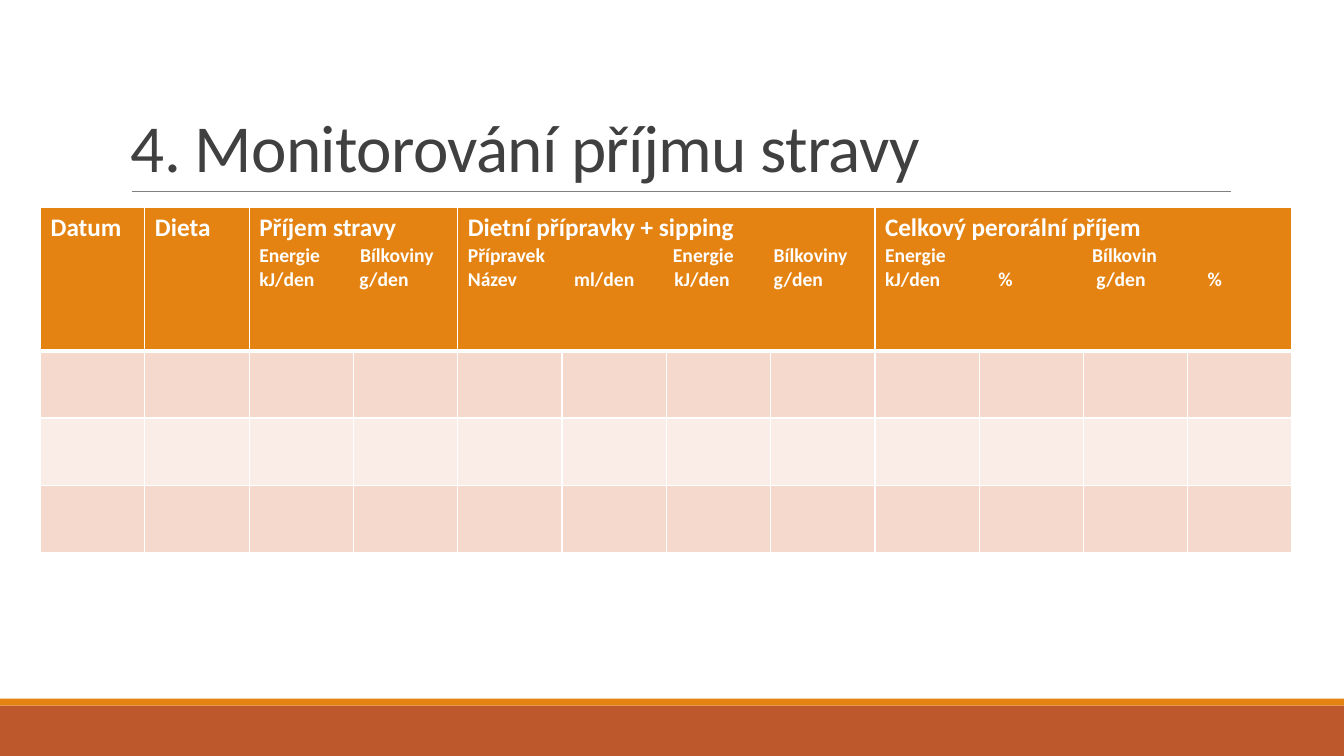
from pptx import Presentation
from pptx.dml.color import RGBColor
from pptx.enum.shapes import MSO_CONNECTOR, MSO_SHAPE
from pptx.enum.text import MSO_ANCHOR
from pptx.oxml.ns import qn
from pptx.util import Pt
from lxml.etree import SubElement

ORANGE = RGBColor(0xE4, 0x83, 0x12)
RUST = RGBColor(0xBD, 0x58, 0x2C)
GREY = RGBColor(0x80, 0x80, 0x80)
CHARCOAL = RGBColor(0x40, 0x40, 0x40)
WHITE = RGBColor(0xFF, 0xFF, 0xFF)
PEACH = RGBColor(0xF5, 0xD9, 0xCC)
PALE_PEACH = RGBColor(0xFA, 0xED, 0xE7)

SLIDE_WIDTH, SLIDE_HEIGHT = 960, 540
COLUMNS = 12
ROW_HEIGHTS = [102.24, 48, 48, 48]
ROW_FILLS = [ORANGE, PEACH, PALE_PEACH, PEACH]

# First column, columns spanned, heading, then lines of (tab position, label)
HEADER_GROUPS = [
    (0, 1, "Datum", []),
    (1, 1, "Dieta", []),
    (2, 2, "Příjem stravy", [
        [(0, "Energie"), (72, "Bílkoviny")],
        [(0, "kJ/den"), (71.5, "g/den")],
    ]),
    (4, 4, "Dietní přípravky + sipping", [
        [(0, "Přípravek"), (146.5, "Energie"), (218.5, "Bílkoviny")],
        [(0, "Název"), (76, "ml/den"), (147.5, "kJ/den"), (218.5, "g/den")],
    ]),
    (8, 4, "Celkový perorální příjem", [
        [(0, "Energie"), (148, "Bílkovin")],
        [(0, "kJ/den"), (81, "%"), (151, "g/den"), (230.5, "%")],
    ]),
]


def write(paragraph, text, size, color, bold=False, spacing=0, line_spacing=None, tabs=()):
    """Fill a paragraph; tabs and letter spacing are in points."""
    if line_spacing:
        paragraph.line_spacing = line_spacing
    if tabs:
        tab_list = SubElement(paragraph._p.get_or_add_pPr(), qn("a:tabLst"))
        for position in tabs:
            SubElement(tab_list, qn("a:tab"), pos=str(Pt(position)), algn="l")
    run = paragraph.add_run()
    run.text = text
    font = run.font
    font.name, font.size, font.bold = "Calibri", Pt(size), bold
    font.color.rgb = color
    if spacing:
        run._r.get_or_add_rPr().set("spc", str(round(spacing * 100)))


class SlideBuilder:
    def __init__(self, slide):
        self.slide = slide

    def band(self, top, height, color):
        band = self.slide.shapes.add_shape(
            MSO_SHAPE.RECTANGLE, 0, Pt(top), Pt(SLIDE_WIDTH), Pt(height))
        band.shadow.inherit = False
        band.fill.solid()
        band.fill.fore_color.rgb = color
        band.line.fill.background()

    def rule(self, left, right, y):
        rule = self.slide.shapes.add_connector(
            MSO_CONNECTOR.STRAIGHT, Pt(left), Pt(y), Pt(right), Pt(y))
        rule.line.color.rgb = GREY
        rule.line.width = Pt(0.5)
        SubElement(rule._element.spPr, qn("a:effectLst"))

    def title(self, text, left, top, width, height):
        frame = self.slide.shapes.add_textbox(
            Pt(left), Pt(top), Pt(width), Pt(height)).text_frame
        frame.word_wrap = True
        frame.vertical_anchor = MSO_ANCHOR.BOTTOM
        write(frame.paragraphs[0], text, size=48, color=CHARCOAL,
              spacing=-0.5, line_spacing=0.85)

    def style_cell(self, cell, fill, top, bottom):
        """Set white borders, with top and bottom widths in points, and the fill."""
        properties = cell._tc.get_or_add_tcPr()
        for side, width in (("L", 1), ("R", 1), ("T", top), ("B", bottom)):
            border = SubElement(properties, qn(f"a:ln{side}"), w=str(Pt(width)))
            SubElement(SubElement(border, qn("a:solidFill")),
                       qn("a:srgbClr"), val=str(WHITE))
        cell.fill.solid()
        cell.fill.fore_color.rgb = fill

    def intake_table(self, left, top, width):
        table = self.slide.shapes.add_table(
            len(ROW_HEIGHTS), COLUMNS, Pt(left), Pt(top),
            Pt(width), Pt(sum(ROW_HEIGHTS))).table
        for column in table.columns:
            column.width = Pt(width / COLUMNS)
        for index, (height, fill) in enumerate(zip(ROW_HEIGHTS, ROW_FILLS)):
            table.rows[index].height = Pt(height)
            for cell in table.rows[index].cells:
                self.style_cell(cell, fill, top=3 if index == 1 else 1,
                                bottom=3 if index == 0 else 1)
        for first, span, heading, lines in HEADER_GROUPS:
            cell = table.cell(0, first)
            if span > 1:
                cell.merge(table.cell(0, first + span - 1))
            frame = cell.text_frame
            write(frame.paragraphs[0], heading, size=18, color=WHITE, bold=True)
            for line in lines:
                write(frame.add_paragraph(), "\t".join(label for _, label in line),
                      size=14, color=WHITE, bold=True,
                      tabs=[position for position, _ in line[1:]])


def main():
    presentation = Presentation()
    presentation.slide_width = Pt(SLIDE_WIDTH)
    presentation.slide_height = Pt(SLIDE_HEIGHT)
    builder = SlideBuilder(presentation.slides.add_slide(presentation.slide_layouts[6]))
    builder.band(504, 36, RUST)
    builder.band(499, 5, ORANGE)
    builder.rule(94, 879, 136.8)
    builder.title("4. Monitorování příjmu stravy", 86.4, 22.3, 792, 114.5)
    builder.intake_table(29, 148.4, 894)
    presentation.save("out.pptx")


if __name__ == "__main__":
    main()
